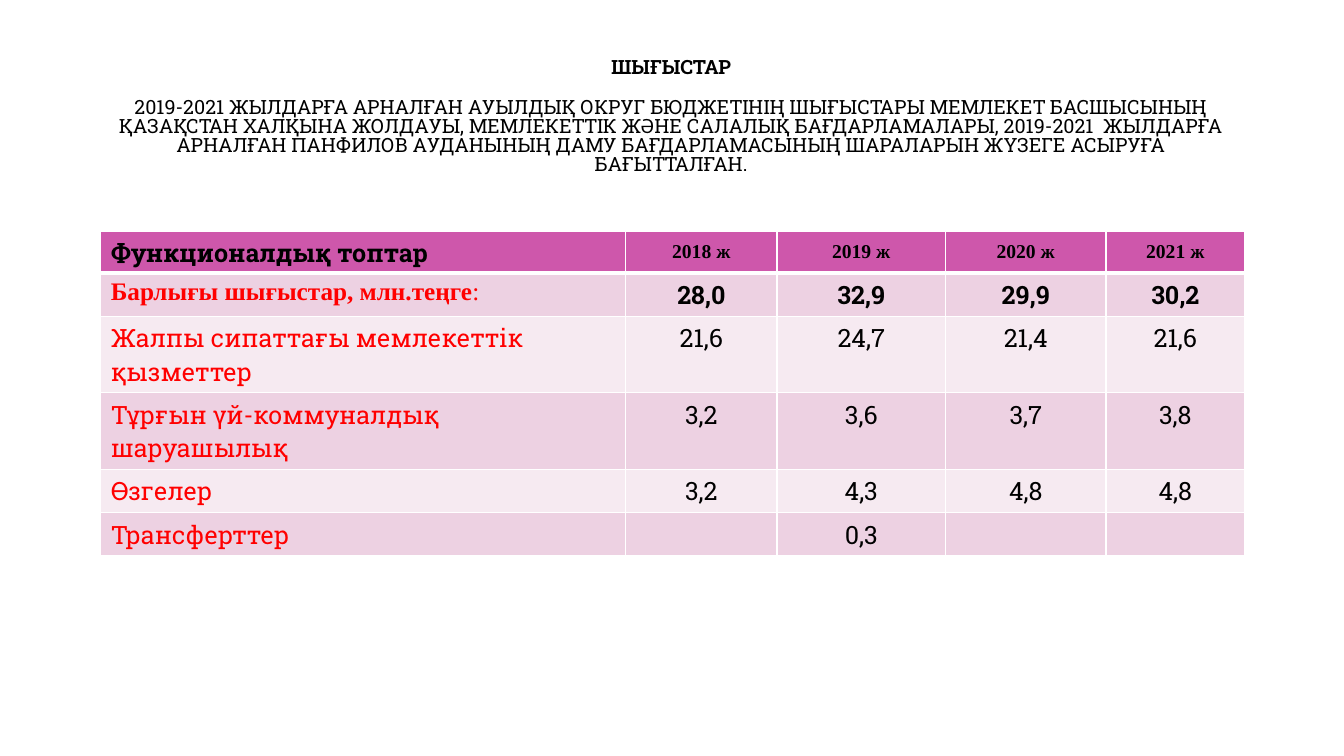
import pptx
import pptx.util
import pptx.dml.color
import pptx.enum.text
import pptx.oxml
import pptx.oxml.ns

Cm, Pt = pptx.util.Cm, pptx.util.Pt
CENTER = pptx.enum.text.PP_ALIGN.CENTER
LEFT = pptx.enum.text.PP_ALIGN.LEFT
MIDDLE = pptx.enum.text.MSO_ANCHOR.MIDDLE
SLAB, TIMES = "Roboto Slab", "Times New Roman"
BLACK, RED, WHITE = "000000", "FF0000", "FFFFFF"
HEADER_FILL, BAND_FILLS = "CE57AB", ("EDD1E2", "F6EAF1")


def rgb(hex_colour):
    return pptx.dml.color.RGBColor.from_string(hex_colour)


def add_run(paragraph, text, colour, **font_format):
    run = paragraph.add_run()
    run.text = text
    run.font.color.rgb = rgb(colour)
    for attribute, value in font_format.items():
        setattr(run.font, attribute, value)


presentation = pptx.Presentation()
presentation.slide_width, presentation.slide_height = Cm(33.87), Cm(19.05)
slide = presentation.slides.add_slide(presentation.slide_layouts[6])

# Heading and introduction
heading = slide.shapes.add_textbox(Cm(2.54), Cm(1), Cm(28.75), Cm(3.9)).text_frame
heading.word_wrap = True
heading.vertical_anchor = MIDDLE
title, introduction = heading.paragraphs[0], heading.add_paragraph()
for paragraph in (title, introduction):
    paragraph.alignment = CENTER
    paragraph.line_spacing = 0.81
title.space_after = Pt(15)
add_run(title, "ШЫҒЫСТАР", BLACK, name=SLAB, size=Pt(14), bold=True)
add_run(
    introduction,
    "2019-2021 ЖЫЛДАРҒА АРНАЛҒАН АУЫЛДЫҚ ОКРУГ БЮДЖЕТІНІҢ ШЫҒЫСТАРЫ "
    "МЕМЛЕКЕТ БАСШЫСЫНЫҢ ҚАЗАҚСТАН ХАЛҚЫНА ЖОЛДАУЫ, МЕМЛЕКЕТТІК ЖӘНЕ "
    "САЛАЛЫҚ БАҒДАРЛАМАЛАРЫ, 2019-2021  ЖЫЛДАРҒА АРНАЛҒАН ПАНФИЛОВ "
    "АУДАНЫНЫҢ ДАМУ БАҒДАРЛАМАСЫНЫҢ ШАРАЛАРЫН ЖҮЗЕГЕ АСЫРУҒА БАҒЫТТАЛҒАН.",
    BLACK, name=SLAB, size=Pt(14), bold=False,
)

# Expenditure table, in millions of tenge
expenditure = [
    ("Функционалдық топтар", "2018 ж", "2019 ж", "2020 ж", "2021 ж"),
    ("Барлығы шығыстар, млн.теңге", "28,0", "32,9", "29,9", "30,2"),
    ("Жалпы сипаттағы мемлекеттік қызметтер", "21,6", "24,7", "21,4", "21,6"),
    ("Тұрғын үй-коммуналдық шаруашылық", "3,2", "3,6", "3,7", "3,8"),
    ("Өзгелер", "3,2", "4,3", "4,8", "4,8"),
    ("Трансферттер", "", "0,3", "", ""),
]
column_widths = (13.23, 3.81, 4.25, 4.04, 3.5)
row_heights = (1.05, 1.09, 1.93, 1.93, 1.09, 1.09)
budget = slide.shapes.add_table(
    len(row_heights), len(column_widths), Cm(2.54), Cm(5.83),
    Cm(sum(column_widths)), Cm(sum(row_heights)),
).table
for column, width in zip(budget.columns, column_widths):
    column.width = Cm(width)
for row, height in zip(budget.rows, row_heights):
    row.height = Cm(height)

for r, values in enumerate(expenditure):
    for c, value in enumerate(values):
        cell = budget.cell(r, c)
        is_header, is_total, is_label = r == 0, r == 1, c == 0
        is_year = is_header and not is_label
        cell.fill.solid()
        cell.fill.fore_color.rgb = rgb(HEADER_FILL if is_header else BAND_FILLS[(r - 1) % 2])

        # White borders, heavier around the header's lower edge
        for position, side in enumerate(("L", "R", "T", "B")):
            heavy = (is_header and side == "B") or (is_total and side == "T")
            cell._tc.get_or_add_tcPr().insert(position, pptx.oxml.parse_xml(
                f'<a:ln{side} {pptx.oxml.ns.nsdecls("a")} w="{Pt(3 if heavy else 1)}">'
                f'<a:solidFill><a:srgbClr val="{WHITE}"/></a:solidFill></a:ln{side}>'
            ))

        # Cell text
        if is_year:
            year_format = {
                "vertical_anchor": MIDDLE, "margin_left": Cm(0.18), "margin_right": Cm(0.18),
                "margin_top": 0, "margin_bottom": 0,
            }
            for attribute, setting in year_format.items():
                setattr(cell, attribute, setting)
        paragraph = cell.text_frame.paragraphs[0]
        paragraph.alignment = LEFT if is_label else CENTER
        if value:
            colour = RED if is_label and not is_header else BLACK
            font = TIMES if is_year or (is_total and is_label) else SLAB
            size = Pt(14 if is_year else 18)
            add_run(paragraph, value, colour, name=font, size=size, bold=is_header or is_total)
            if is_total and is_label:
                add_run(paragraph, ":", colour, name=font, size=size, bold=False)

presentation.save("out.pptx")
